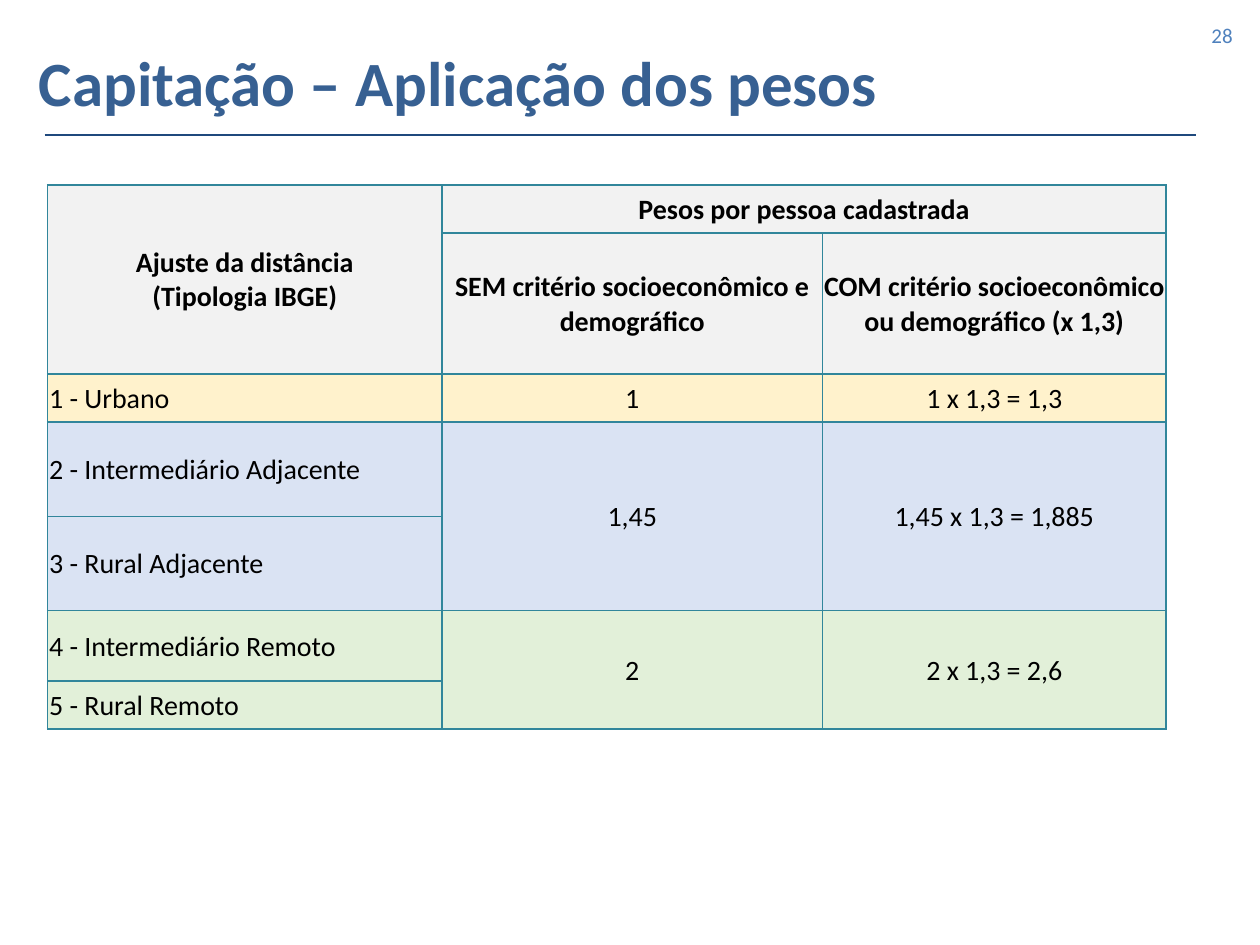
"""Build the slide on how the weights of the capitation payment are applied."""
from lxml import etree
from pptx import Presentation, util as u
from pptx.dml.color import RGBColor
from pptx.enum import shapes, text
from pptx.oxml.ns import qn

HUES = {"title": "376092", "rule": "1F497D", "page": "4F81BD", "ink": "000000",
        "edge": "31869B", "head": "F2F2F2", "urban": "FFF2CC",
        "near": "DAE3F3", "far": "E2F0D9"}
WIDTHS = (7.95, 7.67, 6.93)
ROWS = (
    (0.97, "head", ("Ajuste da distância\n(Tipologia IBGE)", "Pesos por pessoa cadastrada", "")),
    (2.84, "head", ("", "SEM critério socioeconômico e demográfico",
                    "COM critério socioeconômico ou demográfico (x 1,3)")),
    (0.97, "urban", ("1 - Urbano", "1", "1 x 1,3 = 1,3")),
    (1.9, "near", ("2 - Intermediário Adjacente", "1,45", "1,45 x 1,3 = 1,885")),
    (1.9, "near", ("3 - Rural Adjacente", "", "")),
    (1.42, "far", ("4 - Intermediário Remoto", "2", "2 x 1,3 = 2,6")),
    (0.97, "far", ("5 - Rural Remoto", "", "")),
)
SPANS = (((0, 0), (1, 0)), ((0, 1), (0, 2)), ((3, 1), (4, 1)),
         ((3, 2), (4, 2)), ((5, 1), (6, 1)), ((5, 2), (6, 2)))
MID = text.MSO_ANCHOR.MIDDLE


def color(name):
    return RGBColor.from_string(HUES[name])


def apply(item, form):
    for key, value in form.items():
        setattr(item, key, value)


class Deck:
    """Hold the style and the current slide."""

    font = "Calibri"

    def __init__(self):
        self.prs = Presentation()
        apply(self.prs, {"slide_width": u.Cm(25.4), "slide_height": u.Cm(19.05)})
        self.slide = self.prs.slides.add_slide(self.prs.slide_layouts[5])

    def words(self, frame, words, size, hue, align, bold=False):
        frame.text = words
        for para in frame.paragraphs:
            para.alignment = align
            apply(para.font, {"name": self.font, "size": u.Pt(size), "bold": bold})
            para.font.color.rgb = color(hue)

    def title(self, words, left, top, width, height):
        shape = self.slide.shapes.title
        apply(shape, {"left": u.Cm(left), "top": u.Cm(top),
                      "width": u.Cm(width), "height": u.Cm(height)})
        frame = shape.text_frame
        apply(frame, {"auto_size": text.MSO_AUTO_SIZE.NONE, "vertical_anchor": MID})
        self.words(frame, words, 36, "title", text.PP_ALIGN.LEFT, True)
        frame.paragraphs[0].line_spacing = 0.9

    def label(self, words, *box):
        frame = self.slide.shapes.add_textbox(*map(u.Cm, box)).text_frame
        apply(frame, {"word_wrap": True, "vertical_anchor": MID})
        self.words(frame, words, 12, "page", text.PP_ALIGN.RIGHT)

    def rule(self, *ends):
        line = self.slide.shapes.add_connector(
            shapes.MSO_CONNECTOR.STRAIGHT, *map(u.Cm, ends))
        line.line.width = u.Pt(1)
        line.line.color.rgb = color("rule")
        etree.SubElement(line._element.spPr, qn("a:effectLst"))

    def edge(self, cell):
        props = cell._tc.get_or_add_tcPr()
        for side in ("lnL", "lnR", "lnT", "lnB"):
            line = etree.SubElement(props, qn(f"a:{side}"), w=str(u.Pt(1)))
            fill = etree.SubElement(line, qn("a:solidFill"))
            etree.SubElement(fill, qn("a:srgbClr"), val=HUES["edge"])

    def cell(self, cell, words, hue, align, bold):
        self.edge(cell)
        cell.fill.solid()
        cell.fill.fore_color.rgb = color(hue)
        pad = u.Cm(0.03)
        apply(cell, {"margin_left": pad, "margin_right": pad, "margin_top": pad,
                     "margin_bottom": 0, "vertical_anchor": MID})
        self.words(cell.text_frame, words, 16, "ink", align, bold)

    def table(self, left, top):
        size = (sum(WIDTHS), sum(row[0] for row in ROWS))
        grid = self.slide.shapes.add_table(
            len(ROWS), len(WIDTHS), *map(u.Cm, (left, top, *size))).table
        for col, width in zip(grid.columns, WIDTHS):
            col.width = u.Cm(width)
        for r, (height, hue, row) in enumerate(ROWS):
            grid.rows[r].height = u.Cm(height)
            for c, words in enumerate(row):
                head = hue == "head"
                align = text.PP_ALIGN.CENTER if head or c else text.PP_ALIGN.LEFT
                self.cell(grid.cell(r, c), words, hue, align, head)
        for start, end in SPANS:
            grid.cell(*start).merge(grid.cell(*end))


def main():
    deck = Deck()
    deck.title("Capitação – Aplicação dos pesos", 0.53, 0.74, 23.6, 1.98)
    deck.rule(0.9, 2.72, 24.1, 2.72)
    deck.table(0.96, 3.73)
    deck.label("28", 19.18, 0.2, 5.92, 1.02)
    deck.prs.save("out.pptx")


if __name__ == "__main__":
    main()
